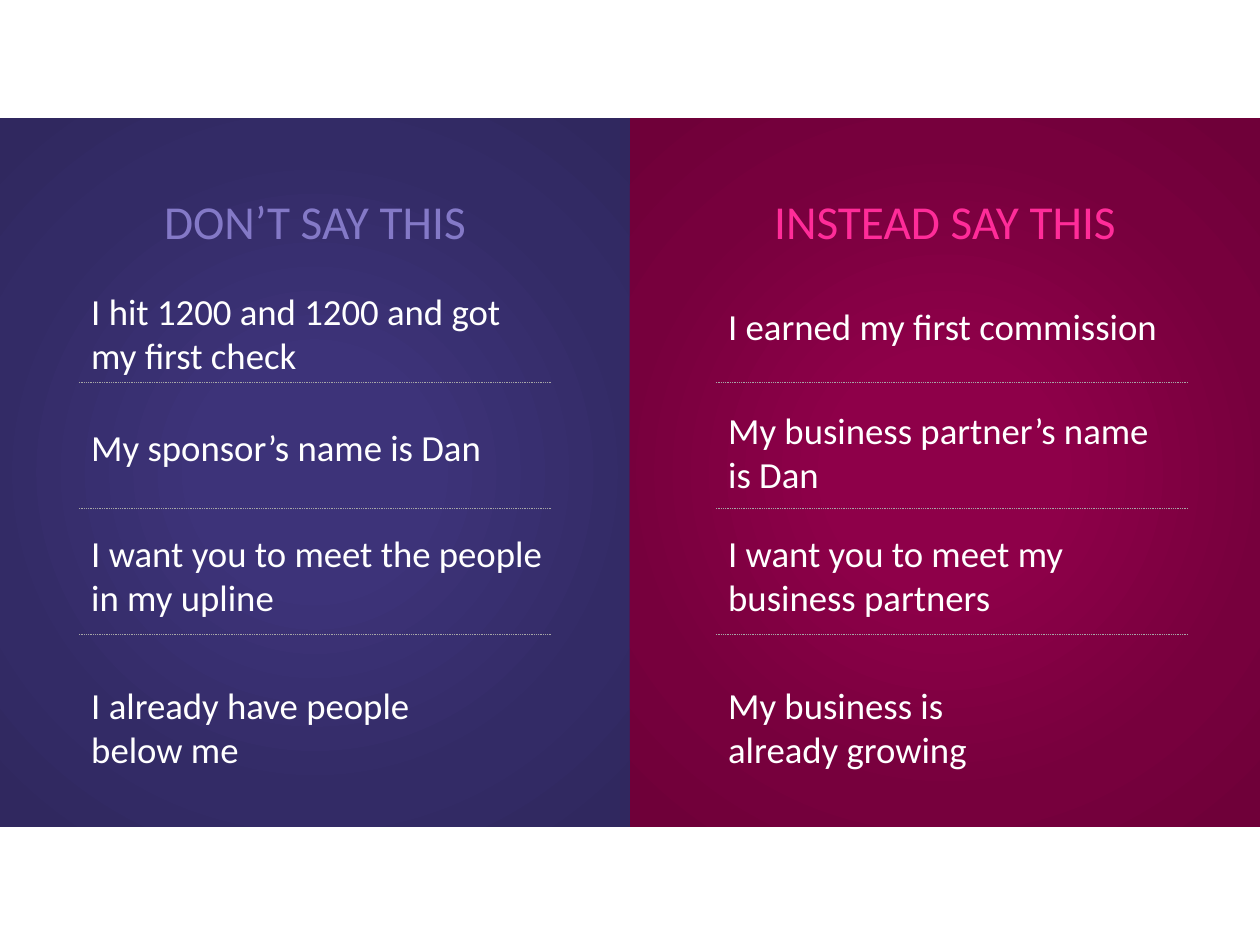
from dataclasses import dataclass

from lxml.etree import SubElement
from pptx import Presentation
from pptx.dml.color import RGBColor
from pptx.enum.dml import MSO_LINE
from pptx.enum.shapes import MSO_CONNECTOR, MSO_SHAPE
from pptx.enum.text import MSO_AUTO_SIZE, PP_ALIGN
from pptx.oxml import parse_xml
from pptx.oxml.ns import nsdecls, qn
from pptx.util import Cm, Pt


@dataclass(frozen=True)
class Theme:
    """Colours, font and type sizes of the slide."""
    font: str = "Calibri"
    head: int = 27
    body: int = 21
    white: str = "FFFFFF"
    rule: str = "A6A6A6"
    violet: str = "8479C7"
    pink: str = "FF2C99"
    blues: tuple = ("3D3379", "3D3379", "332B66", "30285F")
    reds: tuple = ("8E0049", "8E0049", "77003D", "6F0039")
    stops: tuple = (0, 23, 69, 97)


class Deck:
    """Draws panels, rules and text on the current slide."""

    def __init__(self, theme, slide):
        self.theme = theme
        self.shapes = slide.shapes

    def panel(self, x, y, wide, high, tints):
        """Draw a rectangle with a round gradient."""
        box = self.shapes.add_shape(MSO_SHAPE.RECTANGLE, Cm(x), Cm(y), Cm(wide), Cm(high))
        box.shadow.inherit = False
        box.line.fill.background()
        stops = "".join(
            f'<a:gs pos="{stop * 1000}"><a:srgbClr val="{tint}"/></a:gs>'
            for stop, tint in zip(self.theme.stops, tints))
        fill = parse_xml(
            f'<a:gradFill {nsdecls("a")} rotWithShape="1"><a:gsLst>{stops}</a:gsLst>'
            '<a:path path="circle"><a:fillToRect l="50000" t="50000" r="50000" b="50000"/>'
            '</a:path></a:gradFill>')
        box._element.spPr.find(qn("a:prstGeom")).addnext(fill)

    def rule(self, x, y, wide):
        """Draw a level dotted line."""
        line = self.shapes.add_connector(MSO_CONNECTOR.STRAIGHT, Cm(x), Cm(y), Cm(x + wide), Cm(y))
        line.line.color.rgb = RGBColor.from_string(self.theme.rule)
        line.line.width = Pt(0.5)
        line.line.dash_style = MSO_LINE.ROUND_DOT
        SubElement(line._element.spPr, qn("a:effectLst"))

    def text(self, words, *, x, y, wide, high, size, tint, align=PP_ALIGN.LEFT):
        """Place a text box in the given format."""
        box = self.shapes.add_textbox(Cm(x), Cm(y), Cm(wide), Cm(high))
        frame = box.text_frame
        frame.word_wrap = True
        frame.auto_size = MSO_AUTO_SIZE.SHAPE_TO_FIT_TEXT
        par = frame.paragraphs[0]
        par.text = words
        par.alignment = align
        for run in par.runs:
            run.font.name = self.theme.font
            run.font.size = Pt(size)
            run.font.color.rgb = RGBColor.from_string(tint)


def main():
    """Build and save the slide."""
    show = Presentation()
    show.slide_width, show.slide_height = Cm(25.4), Cm(19.05)
    theme = Theme()
    deck = Deck(theme, show.slides.add_slide(show.slide_layouts[6]))
    half, one, two = 12.7, 1.14, 2.06

    sides = [
        ("DON’T SAY THIS", 0, 1.59, theme.blues, theme.violet, [
            ("I hit 1200 and 1200 and got my first check", 5.69, 9.53, two),
            ("My sponsor’s name is Dan", 8.43, 9.27, one),
            ("I want you to meet the people \nin my upline", 10.57, 10.49, two),
            ("I already have people \nbelow me", 13.64, 9.27, two),
        ]),
        ("INSTEAD SAY THIS", half, 14.43, theme.reds, theme.pink, [
            ("I earned my first commission", 5.99, 9.73, one),
            ("My business partner’s name is Dan", 8.1, 9.5, two),
            ("I want you to meet my \nbusiness partners", 10.57, 10.24, two),
            ("My business is \nalready growing", 13.64, 8.86, two),
        ]),
    ]
    for title, edge, left, tints, tint, rows in sides:
        deck.panel(edge, 2.38, half, 14.29, tints)
        deck.text(title, x=edge, y=3.76, wide=half, high=1.42,
                  size=theme.head, tint=tint, align=PP_ALIGN.CENTER)
        for step in range(len(rows) - 1):
            deck.rule(left, 7.7 + 2.54 * step, 9.53)
        for words, top, wide, high in rows:
            deck.text(words, x=left, y=top, wide=wide, high=high,
                      size=theme.body, tint=theme.white)

    show.save("out.pptx")


if __name__ == "__main__":
    main()
